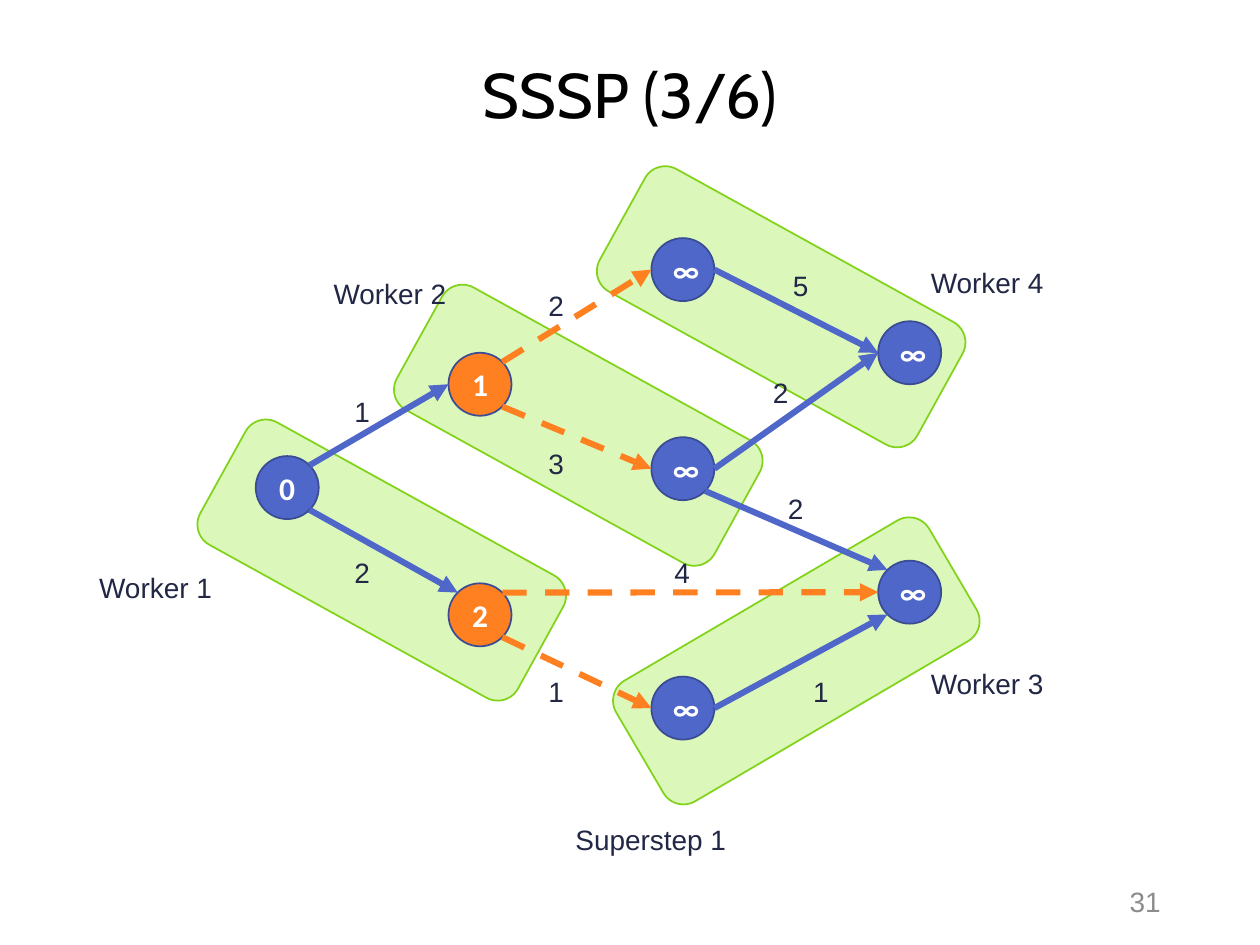
from lxml import etree
from pptx import Presentation
from pptx.dml.color import RGBColor
from pptx.enum.dml import MSO_LINE
from pptx.enum.shapes import MSO_CONNECTOR, MSO_SHAPE
from pptx.enum.text import MSO_ANCHOR, PP_ALIGN
from pptx.oxml.ns import qn
from pptx.util import Inches, Pt

ROUND_RECT, OVAL = MSO_SHAPE.ROUNDED_RECTANGLE, MSO_SHAPE.OVAL
STRAIGHT, DASH = MSO_CONNECTOR.STRAIGHT, MSO_LINE.DASH
TOP, MIDDLE = MSO_ANCHOR.TOP, MSO_ANCHOR.MIDDLE
CENTER, RIGHT = PP_ALIGN.CENTER, PP_ALIGN.RIGHT

COLORS = {
    "worker": "DCF7BA", "worker_edge": "81D31A",
    "idle": "4E67C8", "active": "FF8021", "node_edge": "3A4C94",
    "title": "000000", "label": "212745", "number": "8C8C8C", "white": "FFFFFF",
}

RADIUS = 0.25
DIAGONAL = RADIUS * 0.5 ** 0.5
# Points on a node's rim, as offsets from its centre
RIM = {
    "W": (-RADIUS, 0), "E": (RADIUS, 0),
    "NW": (-DIAGONAL, -DIAGONAL), "NE": (DIAGONAL, -DIAGONAL),
    "SW": (-DIAGONAL, DIAGONAL), "SE": (DIAGONAL, DIAGONAL),
}

WORKER_SIZE = (2.88, 1.11)
CAPTION_SIZE = (1.43, 0.34)
WEIGHT_SIZE = (0.33, 0.34)

# Area left, top, rotation; caption, caption left, top
WORKERS = [
    (2.65, 1.52, 28.9, "Worker 2", 1.88, 0.9),
    (4.26, 0.58, 28.9, "Worker 4", 6.62, 0.81),
    (4.38, 3.39, -30.4, "Worker 3", 6.62, 3.99),
    (1.09, 2.59, 28.9, "Worker 1", 0.02, 3.23),
]

# Node: centre x, y, distance, state
NODES = {
    "source": (1.78, 2.57, "0", "idle"),
    "upper": (3.31, 1.75, "1", "active"),
    "lower": (3.31, 3.58, "2", "active"),
    "top": (4.92, 0.84, "∞", "idle"),
    "middle": (4.92, 2.42, "∞", "idle"),
    "right_low": (6.72, 3.4, "∞", "idle"),
    "bottom": (4.92, 4.32, "∞", "idle"),
    "right_high": (6.72, 1.5, "∞", "idle"),
}

# Edge: start, rim point, end, rim point, weight, weight left, top
EDGES = [
    ("source", "NE", "upper", "W", "1", 2.21, 1.83),
    ("source", "SE", "lower", "NW", "2", 2.21, 3.11),
    ("lower", "SE", "bottom", "W", "1", 3.75, 4.06),
    ("upper", "NE", "top", "W", "2", 3.75, 0.99),
    ("upper", "SE", "middle", "W", "3", 3.75, 2.25),
    ("bottom", "E", "right_low", "SW", "1", 5.85, 4.06),
    ("top", "E", "right_high", "W", "5", 5.69, 0.83),
    ("middle", "E", "right_high", "W", "2", 5.53, 1.68),
    ("lower", "NE", "right_low", "W", "4", 4.75, 3.11),
    ("middle", "SE", "right_low", "NW", "2", 5.65, 2.6),
]


def rgb(name):
    return RGBColor.from_string(COLORS[name])


def write(shape, text, font, size, color, align=CENTER, anchor=MIDDLE, bold=False):
    frame = shape.text_frame
    frame.word_wrap = True
    frame.vertical_anchor = anchor
    paragraph = frame.paragraphs[0]
    paragraph.alignment = align
    run = paragraph.add_run()
    run.text = text
    run.font.name, run.font.size, run.font.bold = font, Pt(size), bold
    run.font.color.rgb = rgb(color)
    return paragraph


def add_text(slide, left, top, width, height, *content, **style):
    box = slide.shapes.add_textbox(*map(Inches, (left, top, width, height)))
    return write(box, *content, **style)


def add_label(slide, left, top, size, text):
    paragraph = add_text(slide, left, top, *size, text, "Arial", 16, "label", anchor=TOP)
    paragraph.line_spacing = 0.8
    paragraph.space_before = Pt(10)


def add_filled(slide, kind, left, top, width, height, fill, edge):
    shape = slide.shapes.add_shape(kind, *map(Inches, (left, top, width, height)))
    shape.shadow.inherit = False
    shape.fill.solid()
    shape.fill.fore_color.rgb = rgb(fill)
    shape.line.color.rgb = rgb(edge)
    shape.line.width = Pt(1)
    return shape


def add_arrow(slide, start, end, color, dashed):
    arrow = slide.shapes.add_connector(STRAIGHT, *map(Inches, (*start, *end)))
    arrow.line.color.rgb = rgb(color)
    arrow.line.width = Pt(3.5)
    if dashed:
        arrow.line.dash_style = DASH
    etree.SubElement(arrow.line._get_or_add_ln(), qn("a:tailEnd"), type="triangle")
    etree.SubElement(arrow._element.spPr, qn("a:effectLst"))


def add_heading(slide, left, top, width, height):
    title = add_text(slide, left, top, width, height, "SSSP (3/6)", "Cabin", 36, "title")
    title.line_spacing = 0.9


def add_page_number(slide, left, top, width, height):
    add_text(slide, left, top, width, height, "31", "Arial", 16, "number", align=RIGHT)


def add_graph(slide, left, top):
    # Worker areas
    for x, y, rotation, *_ in WORKERS:
        area = add_filled(slide, ROUND_RECT, left + x, top + y, *WORKER_SIZE,
                          "worker", "worker_edge")
        area.rotation = rotation

    # Nodes with their current distance
    for x, y, distance, state in NODES.values():
        node = add_filled(slide, OVAL, left + x - RADIUS, top + y - RADIUS,
                          2 * RADIUS, 2 * RADIUS, state, "node_edge")
        write(node, distance, "Calibri", 18, "white", bold=True)

    def rim_point(name, side):
        x, y = NODES[name][:2]
        dx, dy = RIM[side]
        return left + x + dx, top + y + dy

    # Edges: those leaving an active node carry a message
    for start, start_side, end, end_side, weight, x, y in EDGES:
        state = NODES[start][3]
        add_arrow(slide, rim_point(start, start_side), rim_point(end, end_side),
                  state, state == "active")
        add_label(slide, left + x, top + y, WEIGHT_SIZE, weight)

    # Captions
    add_label(slide, left + 3.95, top + 5.23, CAPTION_SIZE, "Superstep 1")
    for *_, caption, x, y in WORKERS:
        add_label(slide, left + x, top + y, CAPTION_SIZE, caption)


def main():
    deck = Presentation()
    deck.slide_width, deck.slide_height = Inches(10), Inches(7.5)
    slide = deck.slides.add_slide(deck.slide_layouts[6])
    add_heading(slide, 0.69, 0.05, 8.62, 1.45)
    add_page_number(slide, 8.32, 6.95, 0.99, 0.4)
    add_graph(slide, 0.5, 1.3)
    deck.save("out.pptx")


if __name__ == "__main__":
    main()
